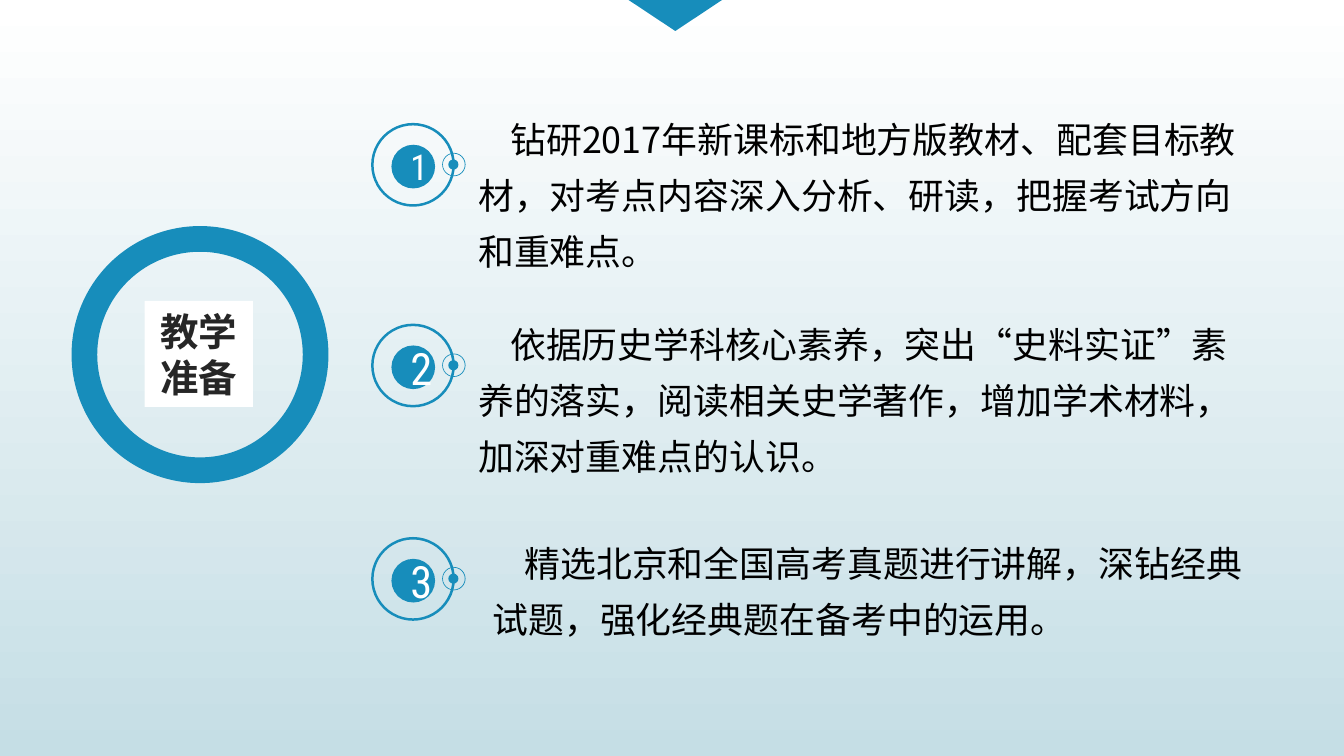
"""Build the slide on teaching preparation with three numbered points."""
import pptx
import pptx.dml.color
import pptx.enum.shapes
import pptx.enum.text
import pptx.oxml.ns
import pptx.util
from lxml import etree

Cm = pptx.util.Cm
Pt = pptx.util.Pt
Preset = pptx.enum.shapes.MSO_SHAPE
Align = pptx.enum.text.PP_ALIGN
Anchor = pptx.enum.text.MSO_ANCHOR

POINTS = [
    {"badge_top": 2.42, "number_size": 19.9, "left": 9.17, "top": 1.93,
     "width": 15.72, "height": 3.58,
     "text": "钻研2017年新课标和地方版教材、配套目标教材，对考点内容深入分析、研读，把握考试方向和重难点。"},
    {"badge_top": 6.37, "number_size": 24.8, "left": 9.17, "top": 5.97,
     "width": 15.72, "height": 3.58,
     "text": "依据历史学科核心素养，突出“史料实证”素养的落实，阅读相关史学著作，增加学术材料，加深对重难点的认识。"},
    {"badge_top": 10.57, "number_size": 24.8, "left": 9.45, "top": 10.29,
     "width": 15.44, "height": 2.49,
     "text": "精选北京和全国高考真题进行讲解，深钻经典试题，强化经典题在备考中的运用。"},
]


def rgb(code):
    return pptx.dml.color.RGBColor.from_string(code)


def write(frame, text, *, font, size, color, bold=False, align=Align.LEFT,
          anchor=Anchor.TOP, spacing=1.0, indent=0):
    frame.word_wrap = True
    frame.auto_size = pptx.enum.text.MSO_AUTO_SIZE.NONE
    frame.vertical_anchor = anchor
    frame.text = text
    for paragraph in frame.paragraphs:
        paragraph.alignment = align
        paragraph.line_spacing = spacing
        if indent:
            paragraph._p.get_or_add_pPr().set("indent", str(Cm(indent)))
        for run in paragraph.runs:
            run.font.size = Pt(size)
            run.font.bold = bold
            run.font.color.rgb = rgb(color)
            run.font.name = font
            east_asian = etree.SubElement(
                run._r.get_or_add_rPr(), pptx.oxml.ns.qn("a:ea"))
            east_asian.set("typeface", font)


class PreparationSlide:
    """Hold the style and the current slide."""

    blue = "178DBB"
    body_font = "Noto Sans CJK SC"
    number_font = "Roboto Condensed"

    def __init__(self, deck):
        self.slide = deck.slides.add_slide(deck.slide_layouts[5])

    def background(self, top, bottom):
        fill = self.slide.background.fill
        fill.gradient()
        fill.gradient_angle = 270
        for stop, position, code in zip(fill.gradient_stops, (0, 1), (top, bottom)):
            stop.position = position
            stop.color.rgb = rgb(code)

    def solid(self, preset, left, top, width, height, band=None, group=None):
        shapes = (group or self.slide).shapes
        shape = shapes.add_shape(preset, Cm(left), Cm(top), Cm(width), Cm(height))
        shape.shadow.inherit = False
        shape.fill.solid()
        shape.fill.fore_color.rgb = rgb(self.blue)
        shape.line.fill.background()
        if band is not None:
            shape.adjustments[0] = band
        return shape

    def title(self, text, left, top, width, height):
        title = self.slide.shapes.title
        title.left, title.top = Cm(left), Cm(top)
        title.width, title.height = Cm(width), Cm(height)
        title.fill.solid()
        title.fill.fore_color.rgb = rgb("FFFFFF")
        write(title.text_frame, text, font=self.body_font, size=21.5,
              color="262626", bold=True, align=Align.CENTER, anchor=Anchor.MIDDLE)

    def badge(self, number, left, top, size):
        group = self.slide.shapes.add_group_shape()
        self.solid(Preset.DONUT, left, top, 1.65, 1.65, 0.03, group)
        self.solid(Preset.DONUT, left + 1.4, top + 0.59, 0.46, 0.46, 0.03, group)
        self.solid(Preset.OVAL, left + 1.52, top + 0.72, 0.2, 0.2, group=group)
        disc = self.solid(Preset.OVAL, left + 0.4, top + 0.43, 0.86, 0.86, group=group)
        write(disc.text_frame, str(number), font=self.number_font, size=size,
              color="FFFFFF", align=Align.CENTER, anchor=Anchor.MIDDLE)

    def point(self, text, left, top, width, height):
        box = self.slide.shapes.add_textbox(Cm(left), Cm(top), Cm(width), Cm(height))
        write(box.text_frame, text, font=self.body_font, size=20,
              color="000000", spacing=1.3, indent=0.63)


def main():
    deck = pptx.Presentation()
    deck.slide_width, deck.slide_height = Cm(26.47), Cm(14.88)
    page = PreparationSlide(deck)
    page.background("FFFFFF", "C5DEE5")
    page.solid(Preset.ISOSCELES_TRIANGLE, 12.35, -0.02, 1.9, 0.63).rotation = 180
    page.solid(Preset.DONUT, 1.41, 4.45, 5.06, 5.06, 0.1)
    page.title("教学\n准备", 2.85, 5.92, 2.13, 2.09)
    for number, point in enumerate(POINTS, 1):
        page.badge(number, 7.31, point["badge_top"], point["number_size"])
        page.point(point["text"], point["left"], point["top"],
                   point["width"], point["height"])
    deck.save("out.pptx")


if __name__ == "__main__":
    main()
